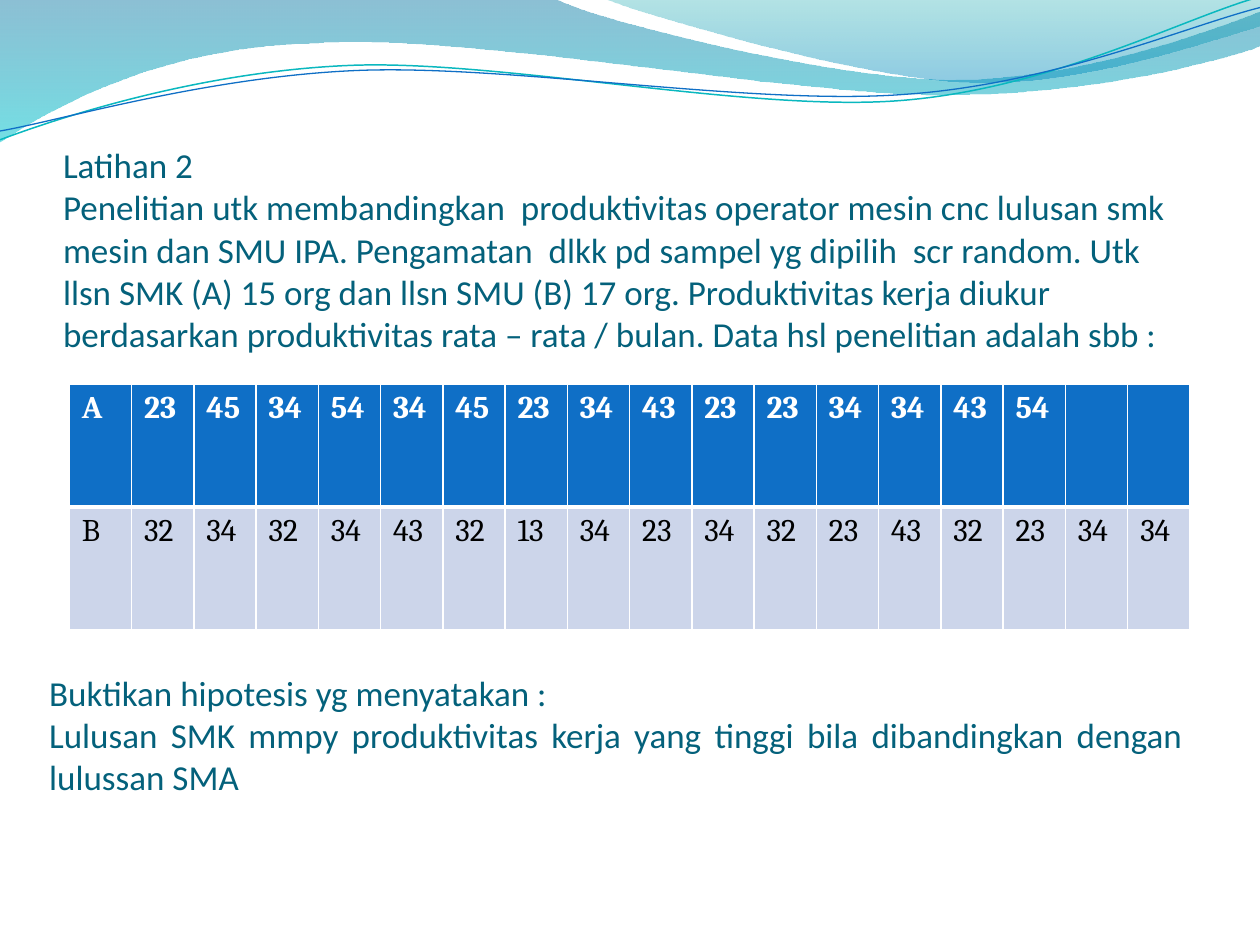
from lxml import etree
from pptx import Presentation
from pptx.dml.color import RGBColor
from pptx.enum.text import MSO_ANCHOR, MSO_AUTO_SIZE, PP_ALIGN
from pptx.oxml.ns import qn
from pptx.util import Inches, Pt

BOTTOM, NO_FIT = MSO_ANCHOR.BOTTOM, MSO_AUTO_SIZE.NONE
LEFT, JUSTIFY = PP_ALIGN.LEFT, PP_ALIGN.JUSTIFY

THEME = {
    "text": "04617B", "head": "0F6FC6", "body": "CCD5EA",
    "white": "FFFFFF", "black": "000000",
    "teal_line": "0AB8BF", "blue_line": "0F6FC6",
    "wide_wave": [("0074A1", 45), ("00C6CF", 55)],
    "right_wave": [("00A1A9", 30), ("008BBF", 45)],
    "text_font": "Calibri", "table_font": "Cambria",
    "text_size": 20, "table_size": 18,
}


def add_text(p, text, font=THEME["text_font"], size=THEME["text_size"],
             color=THEME["text"], bold=False, align=LEFT):
    p.text = text
    p.alignment = align
    for r in p.runs:
        r.font.name, r.font.size, r.font.bold = font, Pt(size), bold
        r.font.color.rgb = RGBColor.from_string(color)
    for br in p._p.findall(qn("a:br")):
        etree.SubElement(br, qn("a:rPr"), sz=str(size * 100))


def add_curve(shapes, start, segments, closed=False):
    """Draw straight (x, y) and Bezier (x1, y1, x2, y2, x, y) segments in inches."""
    builder = shapes.build_freeform(Inches(start[0]), Inches(start[1]))
    ends = [(Inches(seg[-2]), Inches(seg[-1])) for seg in segments]
    builder.add_line_segments(ends, close=closed)
    sp = builder.convert_to_shape()
    sp.shadow.inherit = False
    # Turn the straight steps of the Bezier segments into real curves
    steps = list(sp.element.spPr.iter(qn("a:lnTo")))
    for step, seg in zip(steps, segments):
        if len(seg) == 6:
            curve = etree.Element(qn("a:cubicBezTo"))
            for x, y in zip(seg[::2], seg[1::2]):
                etree.SubElement(curve, qn("a:pt"), x=str(Inches(x) - sp.left),
                                 y=str(Inches(y) - sp.top))
            step.getparent().replace(step, curve)
    return sp


prs = Presentation()
prs.slide_width, prs.slide_height = Inches(10), Inches(7.5)
s = prs.slides.add_slide(prs.slide_layouts[5])

# Gradient waves
waves = [
    (THEME["wide_wave"], (0, 0), [
        (4.4, -0.01), (4.76, 0.17, 6.64, 0.63, 7.58, 0.63), (8.53, 0.63, 9.58, 0.26, 10, 0.09),
        (10.01, 0.36), (9.83, 0.44, 8.7, 0.76, 7.46, 0.75), (6.22, 0.75, 3.82, 0.28, 2.57, 0.34),
        (1.29, 0.36, 0.46, 0.83, -0.01, 1.13)]),
    (THEME["right_wave"], (4.79, -0.01), [
        (5.09, 0.11, 6.82, 0.62, 7.69, 0.65), (8.56, 0.69, 9.61, 0.32, 10, 0.21), (10, 0)]),
]
for stops, start, segments in waves:
    sp = add_curve(s.shapes, start, segments, closed=True)
    sp.line.fill.background()
    sp.fill.gradient()
    sp.fill.gradient_angle = 270
    for stop, position, (color, alpha) in zip(sp.fill.gradient_stops, (0, 1), stops):
        stop.position = position
        stop.color.rgb = RGBColor.from_string(color)
    colors = sp.element.spPr.iter(qn("a:srgbClr"))
    for clr, (color, alpha) in zip(colors, stops):
        etree.SubElement(clr, qn("a:alpha"), val=str(alpha * 1000))

# Thin wave lines
wave_lines = [
    (THEME["teal_line"], 0.85, (0, 1.11), [
        (0.48, 0.93, 1.58, 0.57, 2.77, 0.52), (3.95, 0.47, 5.93, 0.89, 7.13, 0.8),
        (8.33, 0.71, 9.38, 0.15, 9.98, -0.02)]),
    (THEME["blue_line"], 0.75, (0, 1.04), [
        (0.47, 0.96, 1.64, 0.61, 2.83, 0.56), (4.03, 0.51, 5.97, 0.84, 7.17, 0.75),
        (8.36, 0.67, 9.41, 0.21, 10, 0.06)]),
]
for color, width, start, segments in wave_lines:
    sp = add_curve(s.shapes, start, segments)
    sp.fill.background()
    sp.line.color.rgb = RGBColor.from_string(color)
    sp.line.width = Pt(width)

# Title and closing text
title = s.shapes.title
title.left, title.top, title.width, title.height = Inches(0.5), Inches(0.77), Inches(9), Inches(2.04)
title.element.getparent().append(title.element)  # in front of the waves
task = s.shapes.add_textbox(Inches(0.39), Inches(5.08), Inches(9), Inches(1.25))
for tf in (title.text_frame, task.text_frame):
    tf.word_wrap, tf.auto_size, tf.vertical_anchor = True, NO_FIT, BOTTOM
    tf.margin_left = tf.margin_right = tf.margin_bottom = 0
    tf.margin_top = Inches(0.05)

add_text(title.text_frame.paragraphs[0],
         "Latihan 2\vPenelitian utk membandingkan  produktivitas operator mesin cnc lulusan smk "
         "mesin dan SMU IPA. Pengamatan  dlkk pd sampel yg dipilih  scr random. Utk llsn SMK (A) "
         "15 org dan llsn SMU (B) 17 org. Produktivitas kerja diukur berdasarkan produktivitas "
         "rata – rata / bulan. Data hsl penelitian adalah sbb :")
tf = task.text_frame
add_text(tf.paragraphs[0], "Buktikan hipotesis yg menyatakan :")
add_text(tf.add_paragraph(), "Lulusan SMK mmpy produktivitas kerja yang tinggi bila "
         "dibandingkan dengan lulussan SMA", align=JUSTIFY)

# Data table
data = [
    ["A", 23, 45, 34, 54, 34, 45, 23, 34, 43, 23, 23, 34, 34, 43, 54, "", ""],
    ["B", 32, 34, 32, 34, 43, 32, 13, 34, 23, 34, 32, 23, 43, 32, 23, 34, 34],
]
row_styles = [  # fill, text colour, bold, top and bottom border
    (THEME["head"], THEME["white"], True, 1, 3),
    (THEME["body"], THEME["black"], False, 3, 1),
]
table = s.shapes.add_table(len(data), len(data[0]), Inches(0.55), Inches(3.05),
                           Inches(8.9), Inches(1.95)).table
for i, (values, (fill, color, bold, top, bottom)) in enumerate(zip(data, row_styles)):
    for j, value in enumerate(values):
        cell = table.cell(i, j)
        add_text(cell.text_frame.paragraphs[0], str(value), font=THEME["table_font"],
                 size=THEME["table_size"], color=color, bold=bold)
        tcPr = cell._tc.get_or_add_tcPr()
        for side, width in (("L", 1), ("R", 1), ("T", top), ("B", bottom)):
            ln = etree.SubElement(tcPr, qn("a:ln" + side), w=str(Pt(width)))
            solid = etree.SubElement(ln, qn("a:solidFill"))
            etree.SubElement(solid, qn("a:srgbClr"), val=THEME["white"])
        cell.fill.solid()
        cell.fill.fore_color.rgb = RGBColor.from_string(fill)

prs.save("out.pptx")
